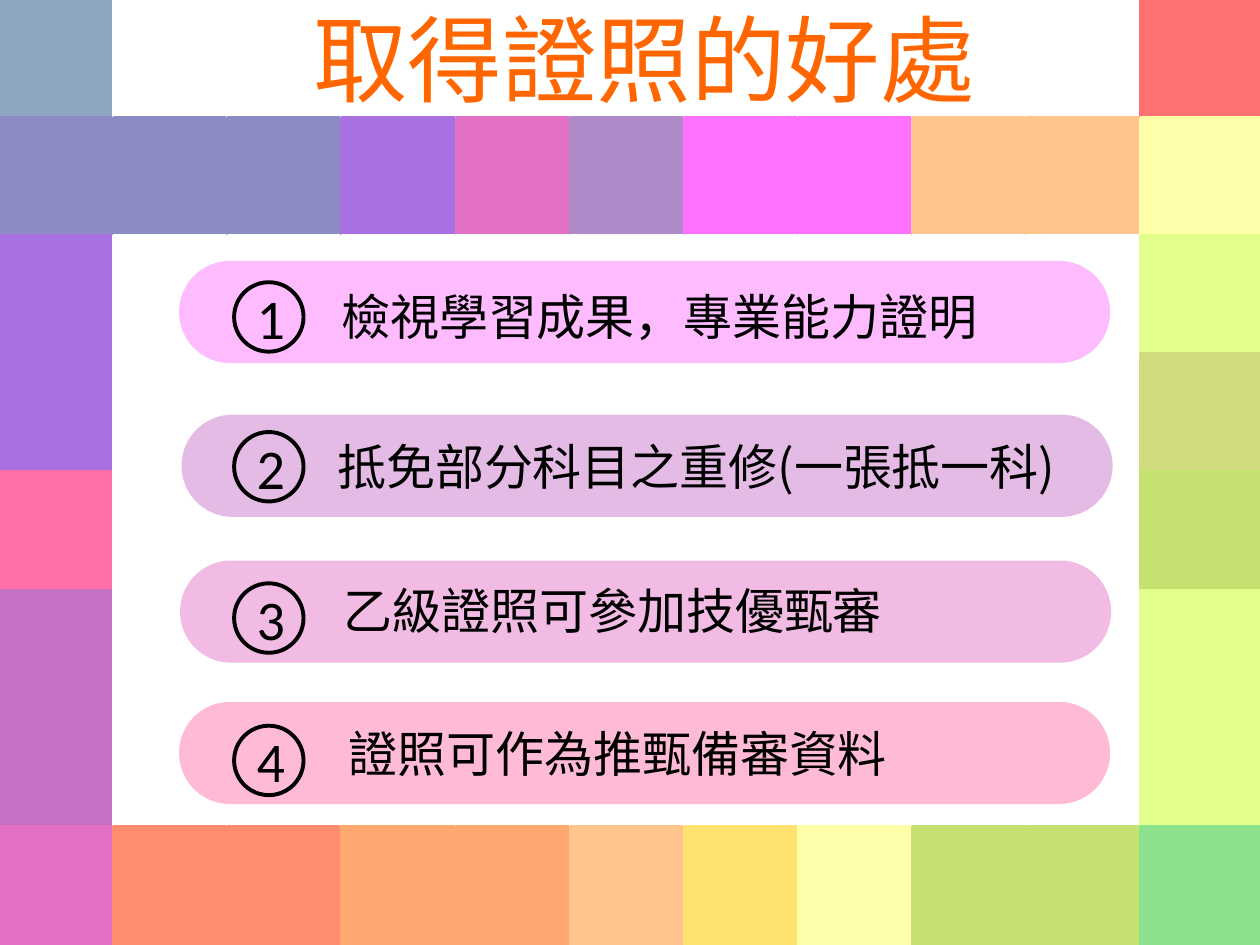
"""Build the slide listing the benefits of earning certificates inside a colourful mosaic frame."""
from dataclasses import dataclass

from lxml import etree
from pptx import Presentation
from pptx import util as u
from pptx.dml.color import RGBColor
from pptx.enum import shapes, text
from pptx.oxml.ns import qn


@dataclass(frozen=True)
class Theme:
    white: str = "FFFFFF"
    ink: str = "000000"
    title: str = "FF6600"
    latin_font: str = "Calibri"
    body_font: str = "Noto Sans CJK SC"
    title_size: int = 54
    number_size: int = 32
    body_size: int = 28
    tile_line: float = 2
    ring_line: float = 2.25
    veil_opacity: int = 44
    pill_opacity: int = 40
    pills: tuple = ("FF57FF", "BC57BC", "DD57BC", "FF579A")
    left_column: tuple = ("376092", "333399", "6600CC", "6600CC",
                          "FF0066", "990099", "990099", "CC0099")
    right_column: tuple = ("FF0000", "FFFF66", "CCFF33", "B1C01E",
                           "99CC00", "CCFF33", "CCFF33", "33CC33")
    upper_band: tuple = ("333399", "333399", "6600CC", "CC0099",
                         "7030A0", "FF00FF", "FF00FF", "FF9933", "FF9933")
    lower_band: tuple = ("FF3300", "FF3300", "FF6600", "FF6600",
                         "FF9933", "FFCC00", "FFFF66", "99CC00", "99CC00")

    def mosaic_columns(self):
        inner = [(self.white, upper, *[self.white] * 5, lower)
                 for upper, lower in zip(self.upper_band, self.lower_band)]
        return [self.left_column, *inner, self.right_column]


class SlideBuilder:
    def __init__(self, slide, theme):
        self.slide = slide
        self.theme = theme

    def shape(self, kind, box, fill=None, opacity=100, line=None, line_width=0):
        shape = self.slide.shapes.add_shape(kind, *map(u.Cm, box))
        shape.shadow.inherit = False
        if fill:
            shape.fill.solid()
            shape.fill.fore_color.rgb = RGBColor.from_string(fill)
            if opacity < 100:
                color = shape.element.spPr.find(qn("a:solidFill")).find(qn("a:srgbClr"))
                etree.SubElement(color, qn("a:alpha"), val=str(opacity * 1000))
        else:
            shape.fill.background()
        if line:
            shape.line.color.rgb = RGBColor.from_string(line)
            shape.line.width = u.Pt(line_width)
        else:
            shape.line.fill.background()
        return shape

    def set_text(self, shape, words, size, color, font, alignment):
        frame = shape.text_frame
        frame.text = words
        frame.word_wrap = True
        frame.vertical_anchor = text.MSO_ANCHOR.MIDDLE
        paragraph = frame.paragraphs[0]
        paragraph.alignment = alignment
        run = paragraph.runs[0]
        run.font.size = u.Pt(size)
        run.font.color.rgb = RGBColor.from_string(color)
        run.font.name = font
        return run

    def mosaic(self, column_pitch, row_pitch, tile):
        for column, colors in enumerate(self.theme.mosaic_columns()):
            for row, color in enumerate(colors):
                box = (column * column_pitch, row * row_pitch, tile, tile)
                self.shape(shapes.MSO_SHAPE.RECTANGLE, box, color,
                           line=color, line_width=self.theme.tile_line)

    def veil(self, box):
        self.shape(shapes.MSO_SHAPE.RECTANGLE, box, self.theme.white, self.theme.veil_opacity)

    def title(self, words, box):
        shape = self.slide.shapes.add_textbox(*map(u.Cm, box))
        self.set_text(shape, words, self.theme.title_size, self.theme.title,
                      self.theme.latin_font, text.PP_ALIGN.CENTER)

    def pill(self, box, color):
        shape = self.shape(shapes.MSO_SHAPE.ROUNDED_RECTANGLE, box, color,
                           self.theme.pill_opacity)
        shape.adjustments[0] = 0.5

    def number(self, value, box):
        shape = self.shape(shapes.MSO_SHAPE.OVAL, box, line=self.theme.ink,
                           line_width=self.theme.ring_line)
        self.set_text(shape, str(value), self.theme.number_size, self.theme.ink,
                      self.theme.latin_font, text.PP_ALIGN.CENTER)

    def benefit(self, words, box, shadowed=False):
        shape = self.slide.shapes.add_textbox(*map(u.Cm, box))
        run = self.set_text(shape, words, self.theme.body_size, self.theme.ink,
                            self.theme.body_font, text.PP_ALIGN.LEFT)
        latin = shape.element.find(".//" + qn("a:latin"))
        latin.addnext(etree.Element(qn("a:ea"), typeface=run.font.name))
        if shadowed:
            effects = etree.Element(qn("a:effectLst"))
            shadow = etree.SubElement(effects, qn("a:outerShdw"), blurRad="38100",
                                      dist="38100", dir="2700000", algn="tl")
            color = etree.SubElement(shadow, qn("a:srgbClr"), val=self.theme.ink)
            etree.SubElement(color, qn("a:alpha"), val="43000")
            latin.addprevious(effects)


def main():
    theme = Theme()
    presentation = Presentation()
    presentation.slide_width, presentation.slide_height = u.Cm(25.4), u.Cm(19.05)
    slide = presentation.slides.add_slide(presentation.slide_layouts[6])
    builder = SlideBuilder(slide, theme)

    builder.mosaic(column_pitch=2.3, row_pitch=2.38, tile=2.38)
    builder.veil((-0.71, -1.47, 27.81, 21.01))
    builder.title("取得證照的好處", (4.47, -0.43, 17.02, 3.18))

    benefits = (
        ("檢視學習成果，專業能力證明", (3.61, 5.26), (6.63, 5.64), 5.69),
        ("抵免部分科目之重修(一張抵一科)", (3.66, 8.36), (6.55, 8.66), 8.71),
        ("乙級證照可參加技優甄審", (3.63, 11.3), (6.68, 11.58), 11.76),
        ("證照可作為推甄備審資料", (3.61, 14.15), (6.78, 14.45), 14.63),
    )
    for index, (words, pill, label, ring_top) in enumerate(benefits):
        builder.pill((*pill, 18.77, 2.06), theme.pills[index])
        builder.benefit(words, (*label, 15.98, 1.45), shadowed=index == 3)
        builder.number(index + 1, (4.72, ring_top, 1.4, 1.4))

    presentation.save("out.pptx")


if __name__ == "__main__":
    main()
